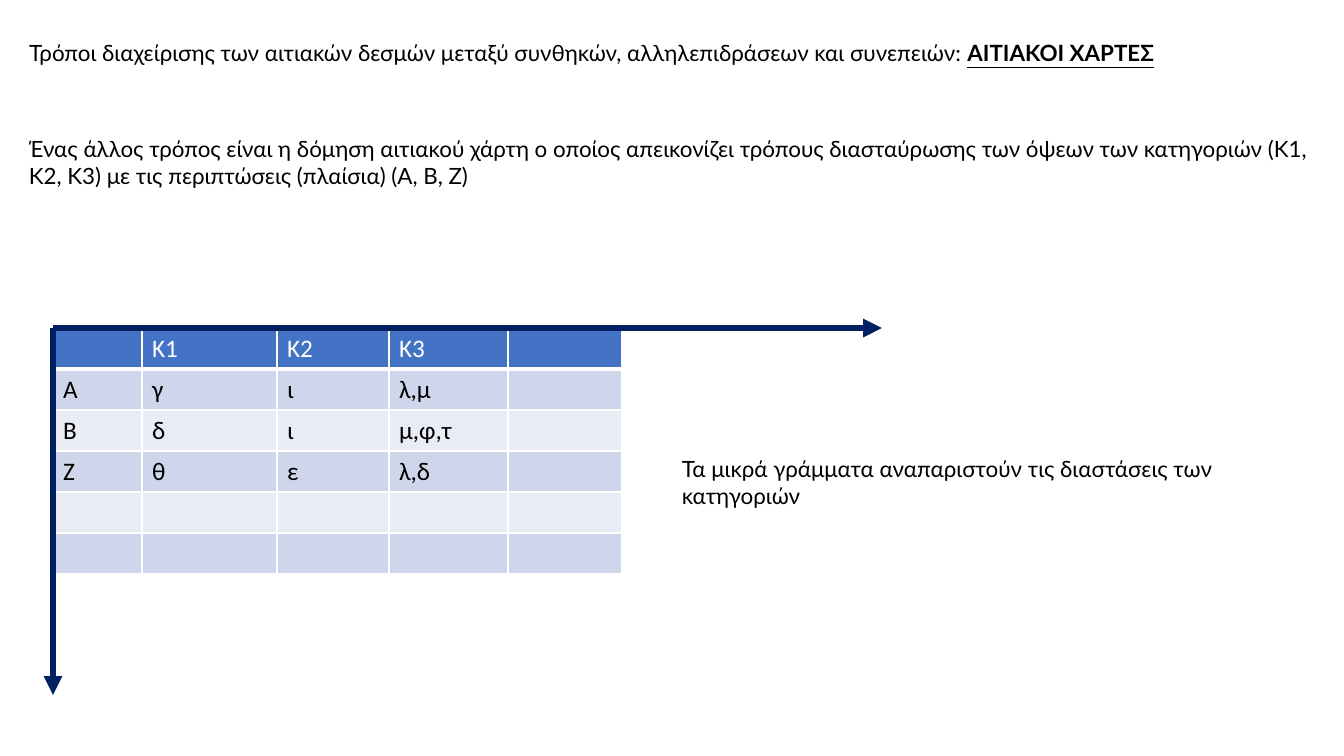
import pptx
import pptx.dml.color
import pptx.enum.shapes
import pptx.enum.text
import pptx.oxml
import pptx.oxml.ns
import pptx.util
from lxml import etree

RGB = pptx.dml.color.RGBColor
BLACK = RGB(0x00, 0x00, 0x00)
WHITE = RGB(0xFF, 0xFF, 0xFF)
NAVY = RGB(0x00, 0x20, 0x60)
HEADER_BLUE = RGB(0x44, 0x72, 0xC4)
BAND_DARK = RGB(0xCF, 0xD5, 0xEA)
BAND_LIGHT = RGB(0xE9, 0xEB, 0xF5)

SLIDE_W, SLIDE_H = 1344, 756
COLUMN_WIDTHS = [89, 135, 112, 119, 114]
ROW_H = 41
CELLS = [
    ["", "Κ1", "Κ2", "Κ3", ""],
    ["Α", "γ", "ι", "λ,μ", ""],
    ["Β", "δ", "ι", "μ,φ,τ", ""],
    ["Ζ", "θ", "ε", "λ,δ", ""],
    [""] * 5,
    [""] * 5,
]


def px(n):
    return pptx.util.Emu(round(n * 914400 / 100.8))


def sub(parent, tag, **attrs):
    return etree.SubElement(parent, pptx.oxml.ns.qn(tag), attrs)


def add_run(p, text, font="Lato", size=16, color=BLACK, bold=False, underline=False):
    r = p.add_run()
    r.text = text
    r.font.name = font
    r.font.size = pptx.util.Pt(size)
    r.font.color.rgb = color
    r.font.bold = bold
    r.font.underline = underline


def prepare_frame(tf):
    tf.word_wrap = True
    tf.auto_size = pptx.enum.text.MSO_AUTO_SIZE.NONE
    tf.vertical_anchor = pptx.enum.text.MSO_ANCHOR.TOP
    p = tf.paragraphs[0]
    p.alignment = pptx.enum.text.PP_ALIGN.LEFT
    return p


def add_heading(s, x, y, w, h):
    sp = s.shapes.title
    sp.left, sp.top, sp.width, sp.height = px(x), px(y), px(w), px(h)
    p = prepare_frame(sp.text_frame)
    add_run(p, "Τρόποι διαχείρισης των αιτιακών δεσμών μεταξύ συνθηκών, "
               "αλληλεπιδράσεων και συνεπειών: ")
    add_run(p, "ΑΙΤΙΑΚΟΙ ΧΑΡΤΕΣ", bold=True, underline=True)


def add_note(s, text, x, y, w, h):
    sp = s.shapes.add_textbox(px(x), px(y), px(w), px(h))
    add_run(prepare_frame(sp.text_frame), text)


def set_borders(cell, bottom):
    tcPr = cell._tc.get_or_add_tcPr()
    for side, width in (("L", 1), ("R", 1), ("T", 1), ("B", bottom)):
        ln = sub(tcPr, f"a:ln{side}", w=str(pptx.util.Pt(width)))
        sub(sub(ln, "a:solidFill"), "a:srgbClr", val=str(WHITE))


def add_category_table(s, x, y):
    table = s.shapes.add_table(len(CELLS), len(COLUMN_WIDTHS), px(x), px(y),
                               px(sum(COLUMN_WIDTHS)), px(ROW_H * len(CELLS))).table
    for column, width in zip(table.columns, COLUMN_WIDTHS):
        column.width = px(width)
    for i, row in enumerate(CELLS):
        table.rows[i].height = px(ROW_H)
        header = i == 0
        fill = HEADER_BLUE if header else BAND_DARK if i % 2 else BAND_LIGHT
        for j, text in enumerate(row):
            cell = table.cell(i, j)
            set_borders(cell, bottom=3 if header else 1)
            cell.fill.solid()
            cell.fill.fore_color.rgb = fill
            if text:
                add_run(cell.text_frame.paragraphs[0], text, font="Calibri",
                        size=18, color=WHITE if header else BLACK)


def add_axis(s, x1, y1, x2, y2):
    line = s.shapes.add_connector(pptx.enum.shapes.MSO_CONNECTOR.STRAIGHT,
                                  px(x1), px(y1), px(x2), px(y2))
    line.line.color.rgb = NAVY
    line.line.width = pptx.util.Pt(4.5)
    sub(line.line._get_or_add_ln(), "a:tailEnd", type="triangle")
    sub(line._element.spPr, "a:effectLst")


def add_causal_map(s, x, y, w, h):
    """Table with one axis arrow along its top and one down its left side."""
    add_category_table(s, x, y)
    add_axis(s, x, y, x + w, y)
    add_axis(s, x, y, x, y + h)


def main():
    prs = pptx.Presentation()
    prs.slide_width, prs.slide_height = px(SLIDE_W), px(SLIDE_H)
    s = prs.slides.add_slide(prs.slide_layouts.get_by_name("Title Only"))
    add_heading(s, 19, 34, 1305, 65)
    add_note(s, "Ένας άλλος τρόπος είναι η δόμηση αιτιακού χάρτη ο οποίος απεικονίζει "
                "τρόπους διασταύρωσης των όψεων των κατηγοριών (Κ1, Κ2, Κ3) με τις "
                "περιπτώσεις (πλαίσια) (Α, Β, Ζ)", 19, 130, 1312, 65)
    add_causal_map(s, 53, 328, 829, 367)
    add_note(s, "Τα μικρά γράμματα αναπαριστούν τις διαστάσεις των κατηγοριών",
             672, 450, 653, 65)
    prs.save("out.pptx")


if __name__ == "__main__":
    main()
